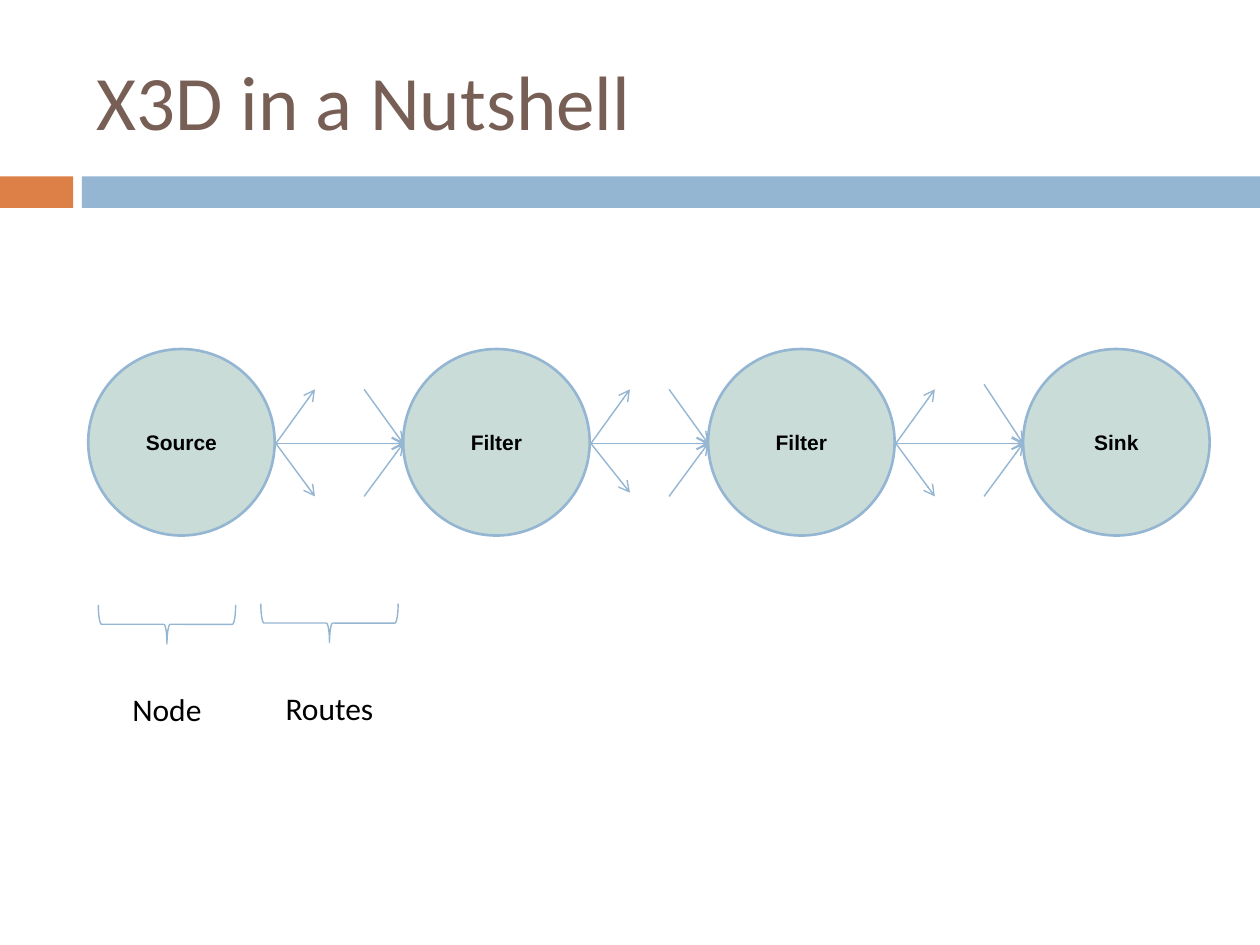
"""Build the X3D dataflow slide: four nodes joined by routes."""
from lxml import etree
from pptx import Presentation
from pptx import util as u
from pptx.dml.color import RGBColor
from pptx.enum import shapes, text
from pptx.oxml.ns import qn

THEME = {
    "brown": "775F55", "orange": "DD8047", "blue": "94B6D2", "pale": "CADCD8", "black": "000000",
    "body": "Calibri", "node": "Arial",
    "title_pt": 44, "label_pt": 18, "node_pt": 12, "outline_pt": 1.5, "line_pt": 0.79,
}
TITLE = "X3D in a Nutshell"
BANDS = [(0, 0.58, "orange"), (0.65, 9.35, "blue")]
NODES = [("Source", 0.7), ("Filter", 3.2), ("Filter", 5.62), ("Sink", 8.12)]
NODE_TOP, NODE_SIZE = 2.77, 1.48
ROUTE_Y, STUB = 3.52, 0.31
ROUTE_ENDS = [
    {"out": (3.09, 3.94), "in": (3.09, 3.94)},
    {"out": (3.09, 3.91), "in": (3.09, 3.94)},
    {"out": (3.09, 3.94), "in": (3.05, 3.94)},
]
LEGEND = [("Node", 1.325, 4.41), ("Routes", 2.615, 4.4)]
BRACE_W, BRACE_H, LABEL_W, LABEL_H, LABEL_DROP = 0.31, 1.09, 1.17, 0.4, 1.02


def color(name):
    return RGBColor.from_string(THEME[name])


def box(*values):
    return [u.Inches(v) for v in values]


def set_line(line, width):
    line.color.rgb = color("blue")
    line.width = u.Pt(THEME[width])


def write(sp, words, font, size, ink, align, anchor, bold=False):
    tf = sp.text_frame
    tf.word_wrap, tf.vertical_anchor = True, anchor
    p = tf.paragraphs[0]
    p.alignment = align
    r = p.add_run()
    r.text = words
    for name, value in {"name": THEME[font], "size": u.Pt(THEME[size]), "bold": bold}.items():
        setattr(r.font, name, value)
    r.font.color.rgb = color(ink)


def add_shape(s, kind, place, fill=None, width=None):
    sp = s.shapes.add_shape(kind, *box(*place))
    sp.shadow.inherit = False
    if fill:
        sp.fill.solid()
        sp.fill.fore_color.rgb = color(fill)
    else:
        sp.fill.background()
    if width:
        set_line(sp.line, width)
    else:
        sp.line.fill.background()
    return sp


def add_arrow(s, start, end):
    sp = s.shapes.add_connector(shapes.MSO_CONNECTOR.STRAIGHT, *box(*start, *end))
    set_line(sp.line, "line_pt")
    etree.SubElement(sp.line._get_or_add_ln(), qn("a:tailEnd"), type="arrow")
    etree.SubElement(sp._element.spPr, qn("a:effectLst"))


def main():
    prs = Presentation()
    prs.slide_width, prs.slide_height = box(10, 7.5)
    s = prs.slides.add_slide(prs.slide_layouts[6])
    kinds, align, anchor = shapes.MSO_SHAPE, text.PP_ALIGN, text.MSO_ANCHOR

    for left, width, fill in BANDS:
        add_shape(s, kinds.RECTANGLE, (left, 1.4, width, 0.25), fill)

    for name, left in NODES:
        sp = add_shape(s, kinds.OVAL, (left, NODE_TOP, NODE_SIZE, NODE_SIZE), "pale", "outline_pt")
        write(sp, name, "node", "node_pt", "black", align.CENTER, anchor.MIDDLE, True)

    for (_, left), (_, right), ends in zip(NODES, NODES[1:], ROUTE_ENDS):
        start, end = (left + NODE_SIZE + 0.01, ROUTE_Y), (right, ROUTE_Y)
        add_arrow(s, start, end)
        for y in ends["out"]:
            add_arrow(s, start, (start[0] + STUB, y))
        for y in ends["in"]:
            add_arrow(s, (end[0] - STUB, y), end)

    for name, center, top in LEGEND:
        place = (center - BRACE_W / 2, top, BRACE_W, BRACE_H)
        sp = add_shape(s, kinds.RIGHT_BRACE, place, width="line_pt")
        sp.rotation = 90
        sp = s.shapes.add_textbox(*box(center - LABEL_W / 2, top + LABEL_DROP, LABEL_W, LABEL_H))
        write(sp, name, "body", "label_pt", "black", align.CENTER, anchor.TOP)

    sp = s.shapes.add_textbox(*box(0.67, 0.25, 8.92, 1.08))
    write(sp, TITLE, "body", "title_pt", "brown", align.LEFT, anchor.MIDDLE)
    prs.save("out.pptx")


if __name__ == "__main__":
    main()
